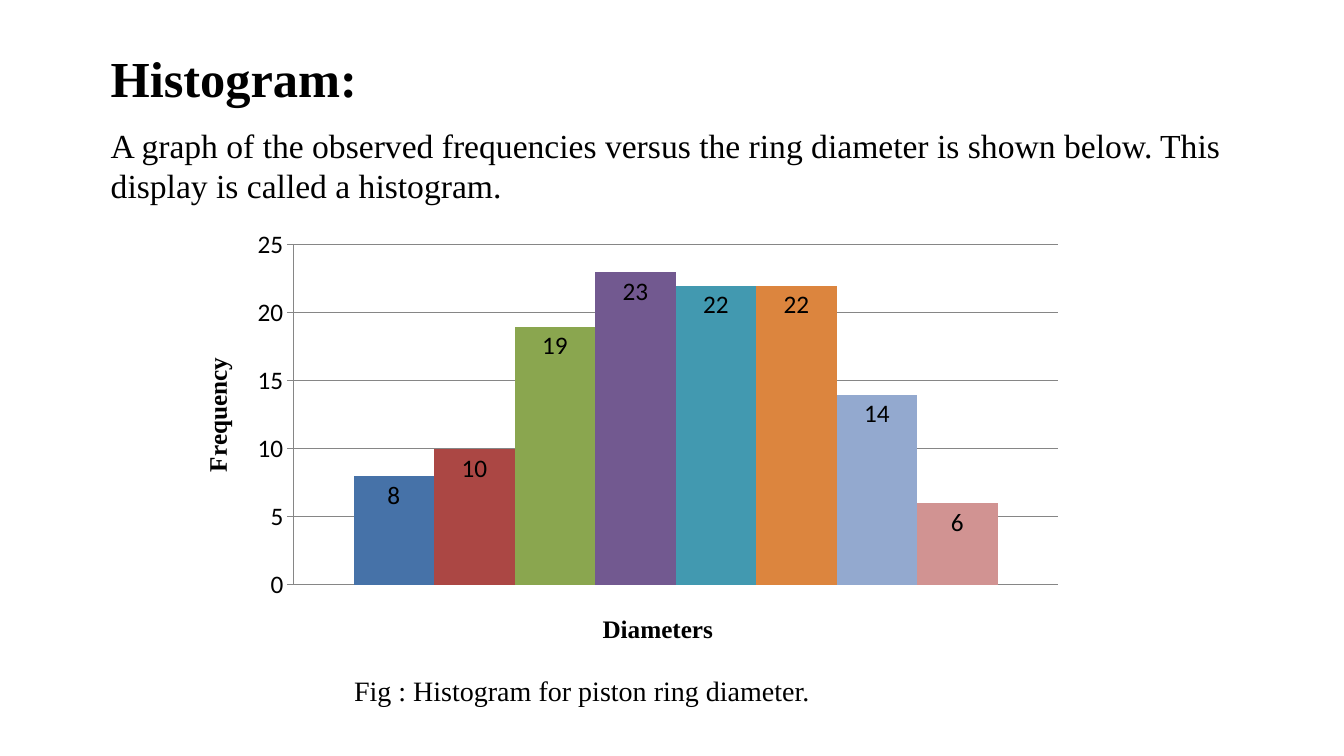
import pptx
import pptx.chart.data
import pptx.dml.color
import pptx.enum.chart
import pptx.enum.text
import pptx.util

WIDE, HIGH = 13.33, 7.5
SERIF, SANS = "Times New Roman", "Calibri"
BLACK = "000000"
BARS = [
    (8, "4672A8"), (10, "AB4744"), (19, "8AA64F"), (23, "725990"),
    (22, "4299B0"), (22, "DC853E"), (14, "93A9CF"), (6, "D19392"),
]


def color(code):
    return pptx.dml.color.RGBColor.from_string(code)


def area(left, top, width, height):
    """Turn shares of the slide into lengths."""
    return [pptx.util.Inches(share * side) for share, side in
            zip((left, top, width, height), (WIDE, HIGH, WIDE, HIGH))]


def style(font, size, face, bold=False):
    font.size = pptx.util.Pt(size)
    font.name = face
    font.bold = bold
    font.color.rgb = color(BLACK)


def add_text(slide, place, lines):
    """Each line is wording, size, bold and space before."""
    frame = slide.shapes.add_textbox(*area(*place)).text_frame
    frame.word_wrap = True
    for count, (words, size, bold, space) in enumerate(lines):
        para = frame.add_paragraph() if count else frame.paragraphs[0]
        para.space_before = pptx.util.Pt(space)
        run = para.add_run()
        run.text = words
        style(run.font, size, SERIF, bold)


def name_axis(axis, words):
    run = axis.axis_title.text_frame.paragraphs[0].add_run()
    run.text = words
    style(run.font, 18, SERIF, True)


def draw_line(form):
    form.line.color.rgb = color("868686")
    form.line.width = pptx.util.Pt(0.75)


def add_bars(slide, place):
    kinds = pptx.enum.chart
    data = pptx.chart.data.CategoryChartData()
    data.categories = ["1"]
    for count, (value, _) in enumerate(BARS, 1):
        data.add_series(f"Series {count}", [value])
    chart = slide.shapes.add_chart(
        kinds.XL_CHART_TYPE.COLUMN_CLUSTERED, *area(*place), data).chart
    chart.has_legend = chart.has_title = False
    style(chart.font, 18, SANS)

    # Bars and their values
    plot = chart.plots[0]
    plot.gap_width, plot.overlap = 150, 0
    plot.vary_by_categories = False
    for series, (_, code) in zip(plot.series, BARS):
        series.format.fill.solid()
        series.format.fill.fore_color.rgb = color(code)
        labels = series.data_labels
        labels.show_value = True
        labels.position = kinds.XL_LABEL_POSITION.INSIDE_END
        style(labels.font, 18, SANS)

    # Axes
    base, scale = chart.category_axis, chart.value_axis
    base.tick_label_position = kinds.XL_TICK_LABEL_POSITION.NONE
    base.major_tick_mark = kinds.XL_TICK_MARK.NONE
    scale.major_tick_mark = kinds.XL_TICK_MARK.OUTSIDE
    scale.minimum_scale, scale.maximum_scale, scale.major_unit = 0, 25, 5
    scale.has_major_gridlines = True
    for form in (base.format, scale.format, scale.major_gridlines.format):
        draw_line(form)
    name_axis(base, "Diameters")
    name_axis(scale, "Frequency")


def main():
    deck = pptx.Presentation()
    deck.slide_width = pptx.util.Inches(WIDE)
    deck.slide_height = pptx.util.Inches(HIGH)
    slide = deck.slides.add_slide(deck.slide_layouts[6])

    # Histogram, caption, then heading and text
    add_bars(slide, (0.1335, 0.292, 0.667, 0.592))
    add_text(slide, (0.256, 0.885, 0.6, 0.059), [
        ("Fig : Histogram for piston ring diameter.", 20, False, 0)])
    add_text(slide, (0.075, 0.056, 0.884, 0.279), [
        ("Histogram:", 36, True, 0),
        ("A graph of the observed frequencies versus the ring diameter is "
         "shown below. This display is called a histogram.", 24, False, 12)])
    deck.save("out.pptx")


if __name__ == "__main__":
    main()
